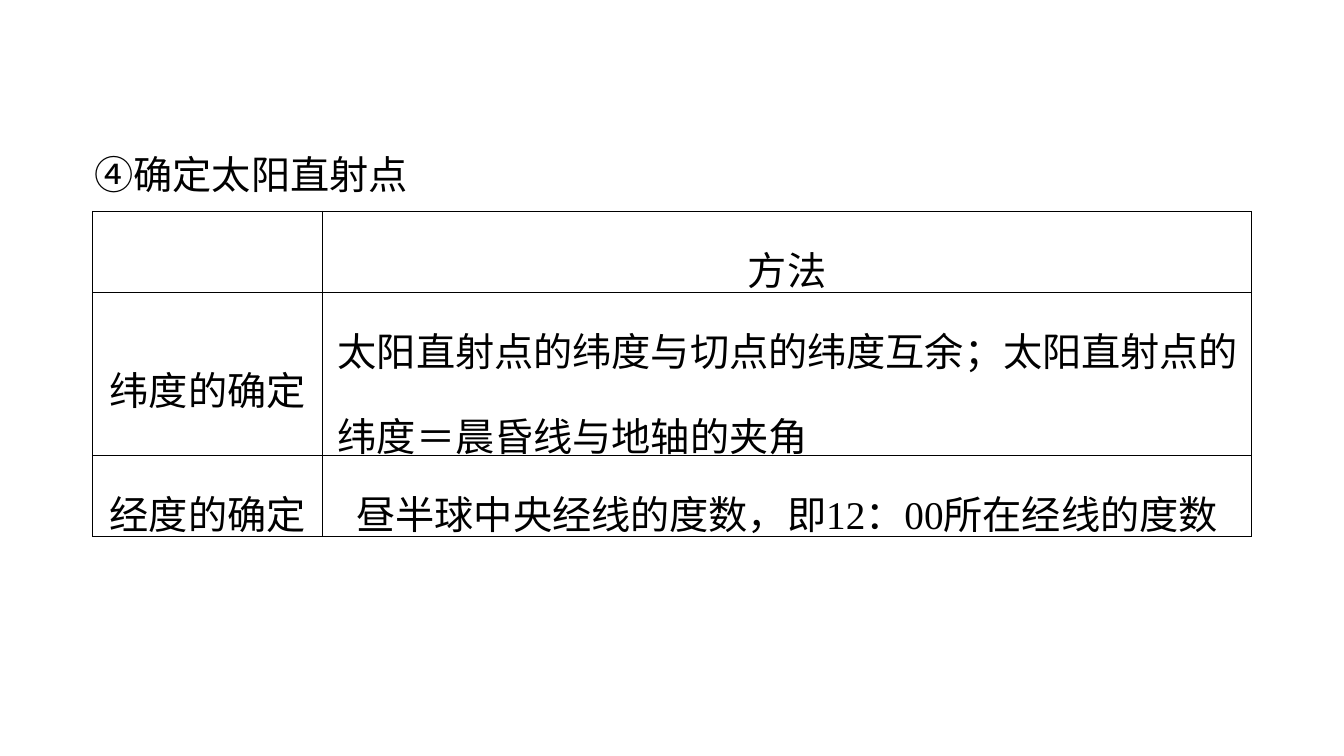
from lxml import etree
from pptx import Presentation
from pptx.dml.color import RGBColor
from pptx.enum import text
from pptx.oxml.ns import qn
from pptx.util import Pt

COLORS = {"ink": "000000"}
LATIN_FONT = "Times New Roman"
CHINESE_FONT = "Noto Sans CJK SC"
FONT_SIZE = 28
LINE_SPACING = 1.5

HEADING = [("④", CHINESE_FONT), ("确定太阳直射点", LATIN_FONT)]
HEADING_BOX = (60.5, 87.1, 838.8, 52.6)
ROWS = [
    ("", "方法"),
    ("纬度的确定", "太阳直射点的纬度与切点的纬度互余；太阳直射点的纬度＝晨昏线与地轴的夹角"),
    ("经度的确定", "昼半球中央经线的度数，即12：00所在经线的度数"),
]
TABLE_LEFT, TABLE_TOP = 66.2, 151
COLUMN_WIDTHS = (164.3, 663.4)
ROW_HEIGHTS = (58, 116.3, 58)
SIDE_MARGIN = 5
LEFT_ALIGNED_CELL = (1, 1)
LEFT_INDENT = 5.8
BORDER_WIDTH = 1


def format_run(run, latin_font=LATIN_FONT):
    run.font.size = Pt(FONT_SIZE)
    run.font.name = latin_font
    run.font.color.rgb = RGBColor.from_string(COLORS["ink"])
    east_asian = etree.Element(qn("a:ea"), typeface=CHINESE_FONT)
    run.font._element.find(qn("a:latin")).addnext(east_asian)


def add_borders(cell):
    properties = cell._tc.get_or_add_tcPr()
    for position, side in enumerate(("lnL", "lnR", "lnT", "lnB")):
        line = etree.Element(qn(f"a:{side}"), w=str(Pt(BORDER_WIDTH)))
        fill = etree.SubElement(line, qn("a:solidFill"))
        etree.SubElement(fill, qn("a:srgbClr"), val=COLORS["ink"])
        properties.insert(position, line)


def add_heading(slide):
    box = slide.shapes.add_textbox(*map(Pt, HEADING_BOX))
    frame = box.text_frame
    frame.word_wrap = True
    frame.auto_size = text.MSO_AUTO_SIZE.SHAPE_TO_FIT_TEXT
    paragraph = frame.paragraphs[0]
    paragraph.alignment = text.PP_ALIGN.JUSTIFY
    paragraph.line_spacing = LINE_SPACING
    for wording, font in HEADING:
        run = paragraph.add_run()
        run.text = wording
        format_run(run, font)


def fill_cell(cell, wording, left_aligned):
    cell.fill.background()
    add_borders(cell)
    cell.vertical_anchor = text.MSO_ANCHOR.MIDDLE
    cell.margin_left = cell.margin_right = Pt(SIDE_MARGIN)
    cell.margin_top = cell.margin_bottom = 0
    if not wording:
        return
    paragraph = cell.text_frame.paragraphs[0]
    paragraph.text = wording
    paragraph.line_spacing = LINE_SPACING
    if left_aligned:
        paragraph.alignment = text.PP_ALIGN.LEFT
        paragraph._p.get_or_add_pPr().set("marL", str(Pt(LEFT_INDENT)))
    else:
        paragraph.alignment = text.PP_ALIGN.CENTER
    format_run(paragraph.runs[0])


def add_method_table(slide):
    frame = slide.shapes.add_table(
        len(ROWS), len(COLUMN_WIDTHS), Pt(TABLE_LEFT), Pt(TABLE_TOP),
        Pt(sum(COLUMN_WIDTHS)), Pt(sum(ROW_HEIGHTS)))
    table = frame.table
    table.first_row = table.horz_banding = False
    for column, width in zip(table.columns, COLUMN_WIDTHS):
        column.width = Pt(width)
    for row, height in zip(table.rows, ROW_HEIGHTS):
        row.height = Pt(height)
    for i, row in enumerate(ROWS):
        for j, wording in enumerate(row):
            fill_cell(table.cell(i, j), wording, (i, j) == LEFT_ALIGNED_CELL)


def main():
    presentation = Presentation()
    presentation.slide_width, presentation.slide_height = Pt(960), Pt(540)
    slide = presentation.slides.add_slide(presentation.slide_layouts[6])
    add_heading(slide)
    add_method_table(slide)
    presentation.save("out.pptx")


if __name__ == "__main__":
    main()
